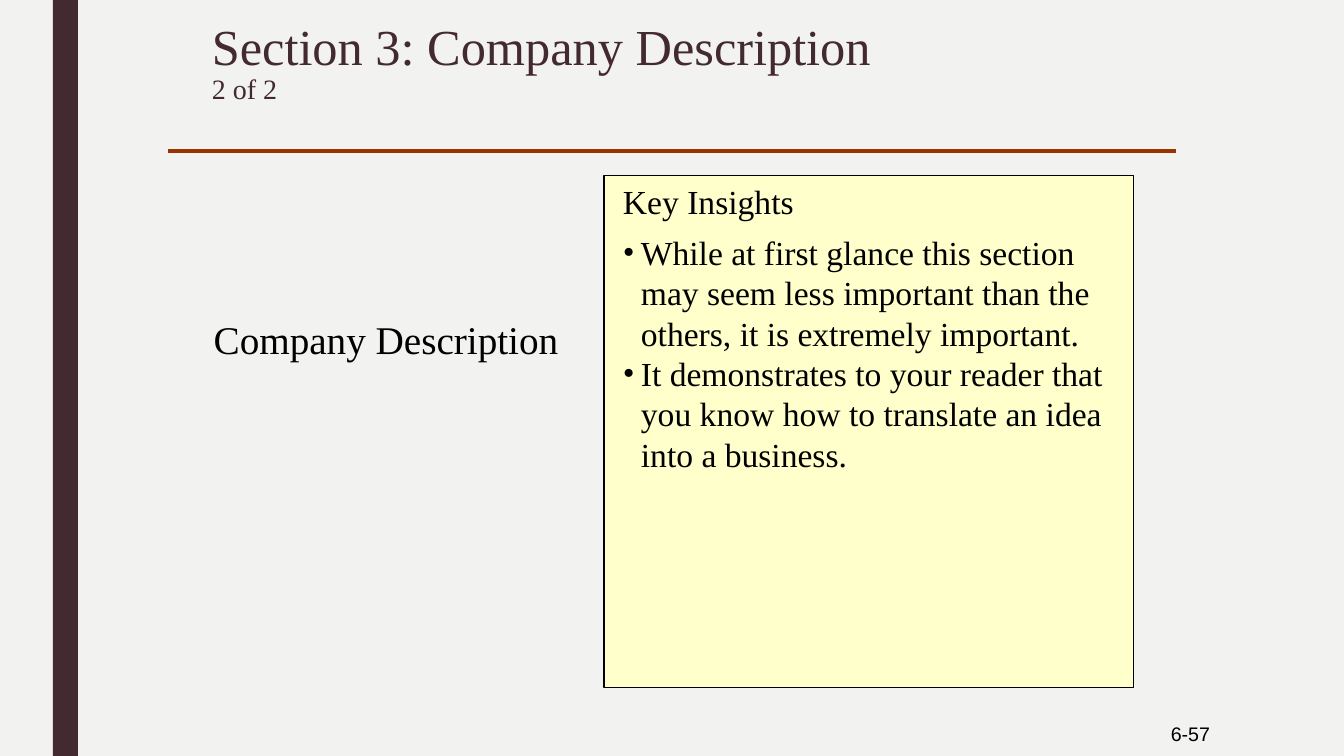
from lxml import etree
from pptx import Presentation
from pptx.dml.color import RGBColor
from pptx.enum.shapes import MSO_CONNECTOR as CONN, MSO_SHAPE as SHAPE
from pptx.enum.text import MSO_ANCHOR as ANCHOR, PP_ALIGN as ALIGN
from pptx.oxml.ns import qn
from pptx.util import Emu, Pt

COLORS = {
    "background": "F2F2F0",
    "plum": "432A30",
    "rule": "993300",
    "note": "FFFFCC",
    "black": "000000",
}
SERIF = "Times New Roman"
BULLET_INDENT = 18


def px(n):
    return Emu(round(n * 914400 / 100.8))


def rgb(name):
    return RGBColor.from_string(COLORS[name])


def add_box(s, x, y, w, h, fill, line=None):
    sp = s.shapes.add_shape(SHAPE.RECTANGLE, px(x), px(y), px(w), px(h))
    sp.shadow.inherit = False
    sp.fill.solid()
    sp.fill.fore_color.rgb = rgb(fill)
    if line:
        sp.line.color.rgb = rgb(line)
        sp.line.width = Pt(0.75)
    else:
        sp.line.fill.background()


def add_rule(s, x1, x2, y, color, width):
    cx = s.shapes.add_connector(CONN.STRAIGHT, px(x1), px(y), px(x2), px(y))
    cx.line.color.rgb = rgb(color)
    cx.line.width = Pt(width)
    etree.SubElement(cx._element.spPr, qn("a:effectLst"))


def add_text(s, x, y, w, h, text, size, font=SERIF, color="black",
             align=ALIGN.LEFT, anchor=ANCHOR.TOP):
    tf = s.shapes.add_textbox(px(x), px(y), px(w), px(h)).text_frame
    tf.word_wrap = True
    tf.vertical_anchor = anchor
    tf.text = text
    for p in tf.paragraphs:
        p.alignment = align
        for r in p.runs:
            r.font.size = Pt(size)
            r.font.name = font
            r.font.color.rgb = rgb(color)
    return tf


def add_bullets(tf):
    for p in tf.paragraphs:
        pPr = p._p.get_or_add_pPr()
        pPr.set("marL", str(px(BULLET_INDENT)))
        pPr.set("indent", str(-px(BULLET_INDENT)))
        etree.SubElement(pPr, qn("a:buFont")).set("typeface", SERIF)
        etree.SubElement(pPr, qn("a:buChar")).set("char", "•")


def main():
    prs = Presentation()
    prs.slide_width, prs.slide_height = px(1344), px(756)
    s = prs.slides.add_slide(prs.slide_layouts[6])
    s.background.fill.solid()
    s.background.fill.fore_color.rgb = rgb("background")

    # Side band and title
    add_box(s, 53, 0, 25, 756, "plum")
    tf = add_text(s, 202, 17, 950, 126,
                  "Section 3: Company Description\v2 of 2", 36, color="plum")
    p = tf.paragraphs[0]
    p.line_spacing = 0.89
    p.runs[1].font.size = Pt(20)
    add_rule(s, 168, 1176, 151, "rule", 3)

    # Topic
    add_text(s, 168, 310, 436, 57, "Company Description", 28,
             align=ALIGN.CENTER)

    # Key insights
    add_box(s, 604, 176, 530, 512, "note", line="black")
    add_text(s, 613, 176, 512, 51, "Key Insights", 24)
    insights = [
        "While at first glance this section may seem less important than "
        "the others, it is extremely important.",
        "It demonstrates to your reader that you know how to translate "
        "an idea into a business.",
    ]
    add_bullets(add_text(s, 613, 227, 521, 254, "\n".join(insights), 24))

    # Page number
    add_text(s, 1044, 712, 176, 44, "6-57", 14, font="Arial",
             align=ALIGN.RIGHT, anchor=ANCHOR.MIDDLE)

    prs.save("out.pptx")


if __name__ == "__main__":
    main()
